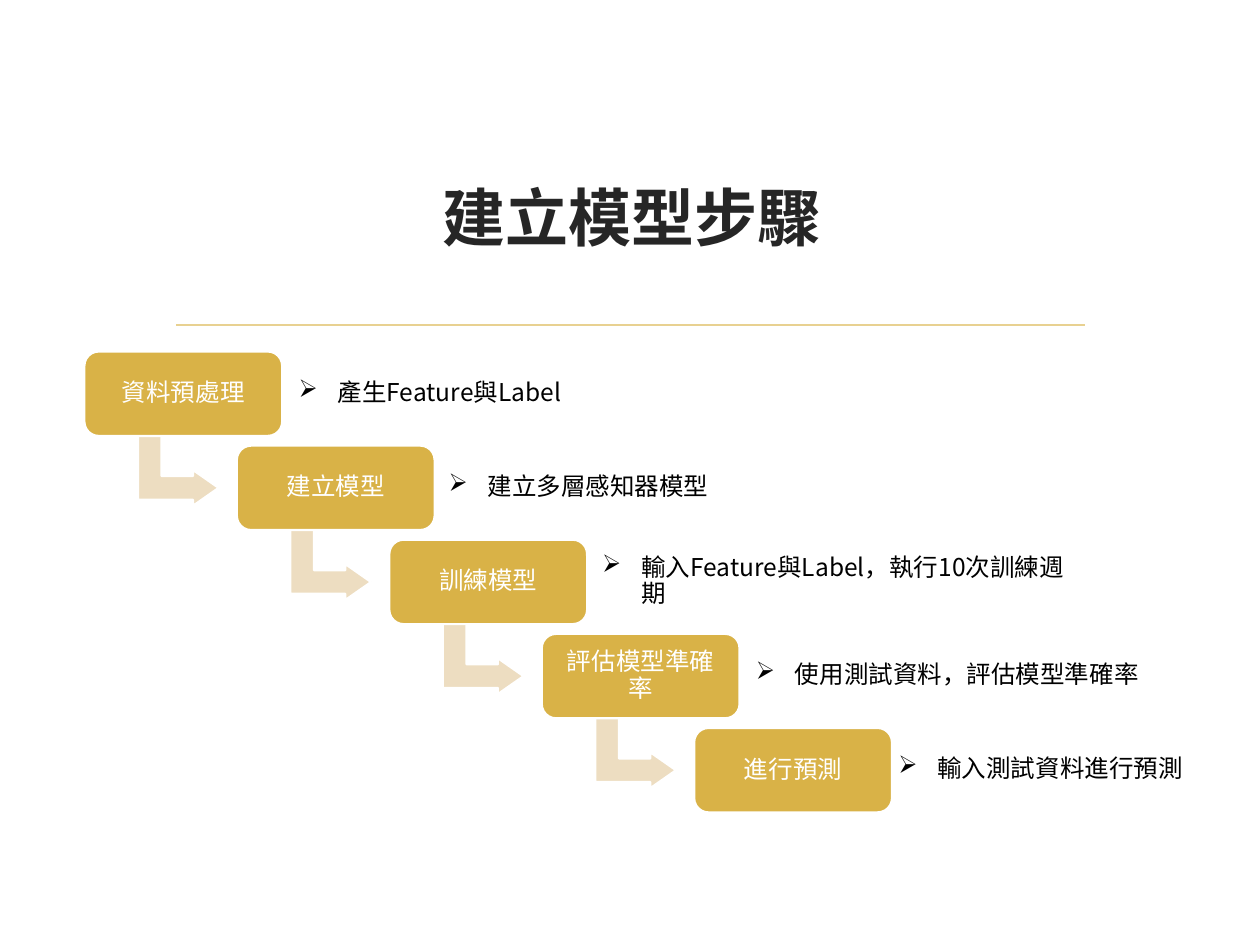
import lxml.etree
import pptx
import pptx.dml.color
import pptx.enum.shapes
import pptx.enum.text
import pptx.oxml.ns
import pptx.util

Inches = pptx.util.Inches
FONT = "Noto Sans CJK SC"
GOLD, PALE_GOLD, RULE_GOLD = "D9B247", "EDDDC1", "E8D191"
WHITE, BLACK, CHARCOAL = "FFFFFF", "000000", "262626"
LINE_WIDTH = pptx.util.Pt(1.25)
CENTER = pptx.enum.text.PP_ALIGN.CENTER
LEFT = pptx.enum.text.PP_ALIGN.LEFT

FIRST_LEFT, FIRST_TOP = 0.67, 2.79
STEP_RIGHT, STEP_DOWN = 1.21, 0.747
STEPS = [
    ("資料預處理", "產生Feature與Label", 2.31, 2.21),
    ("建立模型", "建立多層感知器模型", 3.5, 2.59),
    ("訓練模型", "輸入Feature與Label，執行10次訓練週期", 4.72, 3.97),
    ("評估模型準確率", "使用測試資料，評估模型準確率", 5.94, 3.23),
    ("進行預測", "輸入測試資料進行預測", 7.07, 2.4),
]


def color(value):
    """Return the colour for a hex string."""
    return pptx.dml.color.RGBColor.from_string(value)


def add_child(parent, tag, **attributes):
    """Append a DrawingML element with the given attributes."""
    return lxml.etree.SubElement(parent, pptx.oxml.ns.qn(tag), attributes)


def set_attributes(target, values):
    """Set every attribute of a dict on the target."""
    for name, value in values.items():
        setattr(target, name, value)


def write_text(shape, text, size, hex_color, inset, paragraph_format, bold=False, bullet=None):
    """Write one formatted paragraph into a shape, optionally bulleted."""
    frame = shape.text_frame
    margins = ("margin_left", "margin_top", "margin_right", "margin_bottom")
    set_attributes(frame, dict.fromkeys(margins, Inches(inset)))
    set_attributes(frame, {"word_wrap": True,
                           "vertical_anchor": pptx.enum.text.MSO_ANCHOR.MIDDLE})
    paragraph = frame.paragraphs[0]
    if bullet:
        properties = paragraph._p.get_or_add_pPr()
        properties.set("marL", str(Inches(0.31)))
        properties.set("indent", str(Inches(-0.31)))
        add_child(properties, "a:buChar", char=bullet)
    set_attributes(paragraph, paragraph_format)
    run = paragraph.add_run()
    run.text = text
    set_attributes(run.font, {"name": FONT, "size": pptx.util.Pt(size), "bold": bold})
    run.font.color.rgb = color(hex_color)
    add_child(run._r.get_or_add_rPr(), "a:ea", typeface=FONT)


def add_text(slide, bounds, *text_format, **options):
    """Add a text box holding one paragraph."""
    shape = slide.shapes.add_textbox(*map(Inches, bounds))
    write_text(shape, *text_format, **options)


def add_filled_shape(slide, kind, bounds, fill, adjustments):
    """Add a preset shape with a solid fill and a white outline."""
    shape = slide.shapes.add_shape(kind, *map(Inches, bounds))
    shape.shadow.inherit = False
    shape.fill.solid()
    shape.fill.fore_color.rgb = color(fill)
    shape.line.color.rgb = color(WHITE)
    shape.line.width = LINE_WIDTH
    for index, value in enumerate(adjustments):
        shape.adjustments[index] = value
    return shape


def add_rule(slide, left, right, top):
    """Add the horizontal rule below the title."""
    rule = slide.shapes.add_connector(
        pptx.enum.shapes.MSO_CONNECTOR.STRAIGHT,
        Inches(left), Inches(top), Inches(right), Inches(top))
    rule.line.color.rgb = color(RULE_GOLD)
    rule.line.width = LINE_WIDTH
    add_child(rule._element.spPr, "a:effectLst")


def add_step(slide, index, name, detail, detail_left, detail_width):
    """Add one stair: arrow to the next step, named box and description."""
    kinds = pptx.enum.shapes.MSO_SHAPE
    left = FIRST_LEFT + index * STEP_RIGHT
    top = FIRST_TOP + index * STEP_DOWN
    if index < len(STEPS) - 1:
        arrow = add_filled_shape(slide, kinds.BENT_UP_ARROW, (left + 0.46, top + 0.62, 0.57, 0.64),
                                 PALE_GOLD, (0.328, 0.25, 0.358))
        arrow.rotation = 90
    box = add_filled_shape(slide, kinds.ROUNDED_RECTANGLE, (left, top, 1.57, 0.67),
                           GOLD, (0.17,))
    write_text(box, name, 14, WHITE, 0.09,
               {"alignment": CENTER, "line_spacing": 0.9, "space_after": pptx.util.Pt(4.9)})
    add_text(slide, (detail_left, top + 0.06, detail_width, 0.54), detail, 14, BLACK, 0.06,
             {"alignment": LEFT, "line_spacing": 0.9, "space_after": pptx.util.Pt(2.1)},
             bullet="➢")


def main():
    """Build the slide of model-building steps and save it."""
    presentation = pptx.Presentation()
    set_attributes(presentation, {"slide_width": Inches(10), "slide_height": Inches(7.5)})
    slide = presentation.slides.add_slide(presentation.slide_layouts[6])
    add_rule(slide, 1.4, 8.61, 2.58)
    add_text(slide, (1.29, 1, 7.44, 1.43), "建立模型步驟", 36, CHARCOAL, 0.05,
             {"alignment": CENTER}, bold=True)
    for index, step in enumerate(STEPS):
        add_step(slide, index, *step)
    presentation.save("out.pptx")


if __name__ == "__main__":
    main()
